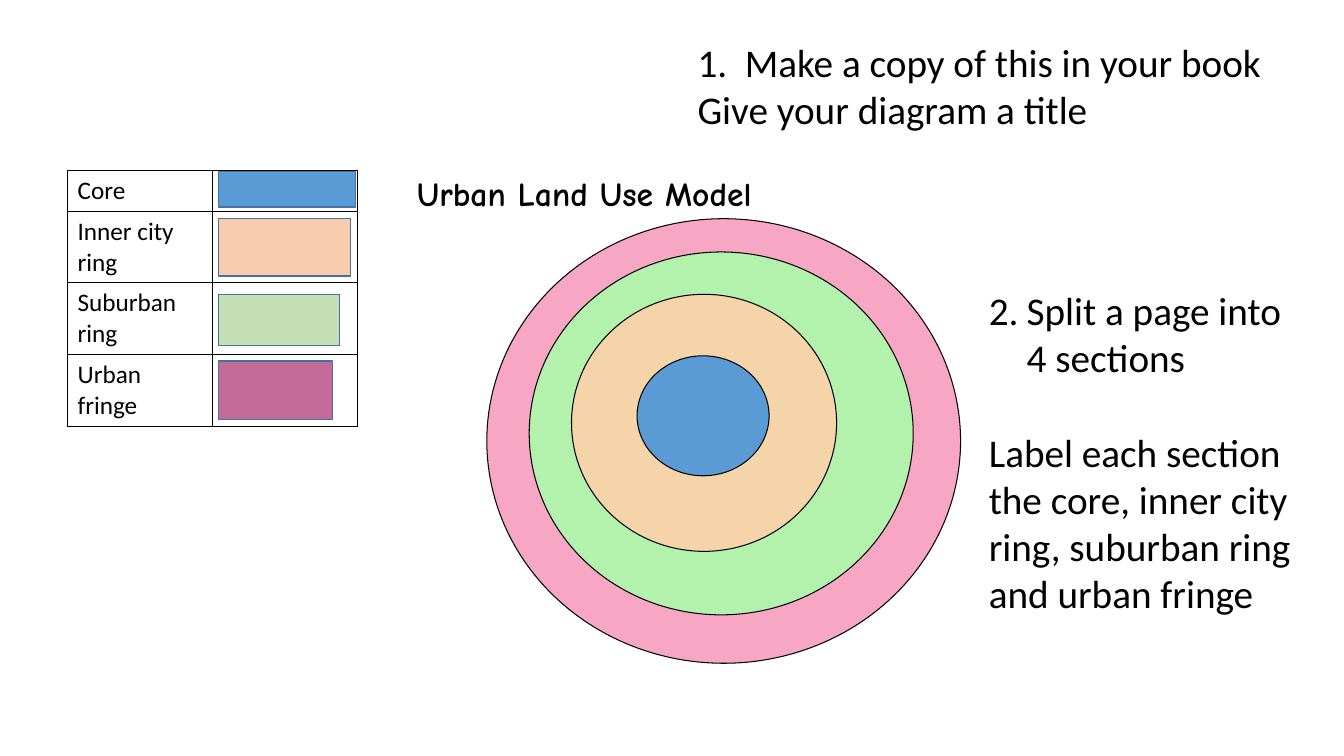
import pptx
import pptx.dml.color
import pptx.enum.shapes
import pptx.enum.text
import pptx.oxml
import pptx.oxml.ns
import pptx.util
from pptx.util import Pt

COLOURS = {
    "text": "000000",
    "outline": "000000",
    "swatch outline": "43739E",
    "core": "5B9BD5",
    "inner ring": "F5D4A9",
    "suburban ring": "B3F2AC",
    "fringe ring": "F7A7C4",
    "inner key": "F8CBAD",
    "suburban key": "C5E0B4",
    "fringe key": "C56B9A",
}

# Left, top, width, height in points, outermost ring first
RINGS = [
    ("fringe ring", (347.76, 156.24, 338.4, 317.52)),
    ("suburban ring", (378, 180, 274.32, 259.2)),
    ("inner ring", (408.24, 210.24, 189.36, 183.6)),
    ("core", (455.04, 254.16, 94.32, 85.68)),
]

# Label, row height, swatch colour, swatch top, width and height
KEY_LEFT, KEY_TOP, KEY_COLUMN, SWATCH_LEFT = 48.24, 121.68, 103.68, 156.24
KEY_ROWS = [
    ("Core", 29.2, "core", 122.4, 97.6, 25.6),
    ("Inner city ring", 50.6, "inner key", 156.24, 94.32, 41.04),
    ("Suburban ring", 50.6, "suburban key", 210.24, 86.4, 36.72),
    ("Urban fringe", 50.6, "fringe key", 257.76, 81.36, 41.76),
]


def colour(name):
    return pptx.dml.color.RGBColor.from_string(COLOURS[name])


def make_element(xml):
    namespace = pptx.oxml.ns.nsdecls("a")
    return pptx.oxml.parse_xml(xml.replace("NS", namespace, 1))


def add_run(paragraph, text, size, font="Calibri", bold=False):
    run = paragraph.add_run()
    run.text = text
    run.font.name = font
    run.font.size = Pt(size)
    run.font.bold = bold
    run.font.color.rgb = colour("text")


def place(placeholder, left, top, width, height):
    placeholder.left, placeholder.top = Pt(left), Pt(top)
    placeholder.width, placeholder.height = Pt(width), Pt(height)
    frame = placeholder.text_frame
    frame.word_wrap = True
    frame.auto_size = pptx.enum.text.MSO_AUTO_SIZE.NONE
    frame.vertical_anchor = pptx.enum.text.MSO_ANCHOR.TOP
    return frame


def add_figure(slide, kind, box, fill, line, line_width):
    shape = slide.shapes.add_shape(kind, *(Pt(length) for length in box))
    shape.shadow.inherit = False
    shape.fill.solid()
    shape.fill.fore_color.rgb = colour(fill)
    shape.line.color.rgb = colour(line)
    shape.line.width = Pt(line_width)


def fill_title(title):
    frame = place(title, 135.36, 120.24, 563.76, 36)
    paragraph = frame.paragraphs[0]
    paragraph.alignment = pptx.enum.text.PP_ALIGN.CENTER
    add_run(paragraph, "Urban Land Use Model", 24, "Comic Neue", True)


def fill_instructions(placeholder, box, items):
    """Each item is its text, the space before it and its list number."""
    frame = place(placeholder, *box)
    for index, (text, space, number) in enumerate(items):
        paragraph = frame.add_paragraph() if index else frame.paragraphs[0]
        paragraph.space_before = Pt(space)
        add_run(paragraph, text, 28)
        properties = paragraph._p.get_or_add_pPr()
        indent = Pt(27) if number else 0
        properties.set("marL", str(indent))
        properties.set("indent", str(-indent))
        if number:
            bullet = f'<a:buAutoNum NS type="arabicPeriod" startAt="{number}"/>'
            properties.append(make_element('<a:buFont NS typeface="+mj-lt"/>'))
        else:
            bullet = "<a:buNone NS/>"
        properties.append(make_element(bullet))


def format_cell(cell):
    properties = cell._tc.get_or_add_tcPr()
    for side in "LRTB":
        properties.append(make_element(
            f'<a:ln{side} NS w="{Pt(1)}"><a:solidFill>'
            f'<a:srgbClr val="{COLOURS["outline"]}"/>'
            f"</a:solidFill></a:ln{side}>"))
    cell.fill.background()


def add_key(slide):
    total = sum(row[1] for row in KEY_ROWS)
    table = slide.shapes.add_table(
        len(KEY_ROWS), 2, Pt(KEY_LEFT), Pt(KEY_TOP),
        Pt(2 * KEY_COLUMN), Pt(total)).table
    table.first_row = table.horz_banding = False
    for row, (label, height, *_) in zip(table.rows, KEY_ROWS):
        row.height = Pt(height)
        for cell in row.cells:
            format_cell(cell)
        add_run(row.cells[0].text_frame.paragraphs[0], label, 18)
    for _, _, fill, top, width, height in KEY_ROWS:
        add_figure(slide, pptx.enum.shapes.MSO_SHAPE.RECTANGLE,
                   (SWATCH_LEFT, top, width, height),
                   fill, "swatch outline", 1)


def main():
    presentation = pptx.Presentation()
    presentation.slide_width, presentation.slide_height = Pt(960), Pt(540)
    two_content = presentation.slide_layouts[3]
    slide = presentation.slides.add_slide(two_content)
    title, first_step, second_step = slide.placeholders

    # Title and instructions
    fill_title(title)
    fill_instructions(first_step, (491.04, 23.76, 436.32, 74.88), [
        ("1.  Make a copy of this in your book", 0, None),
        ("Give your diagram a title", 0, None),
    ])
    fill_instructions(second_step, (699.12, 200.88, 243.36, 266.4), [
        ("Split a page into 4 sections", 0, 2),
        ("Label each section the core, inner city ring, "
         "suburban ring and urban fringe", 34, None),
    ])

    # Land use rings
    for fill, box in RINGS:
        add_figure(slide, pptx.enum.shapes.MSO_SHAPE.OVAL, box,
                   fill, "outline", 0.75)

    # Colour key
    add_key(slide)

    presentation.save("out.pptx")


if __name__ == "__main__":
    main()
